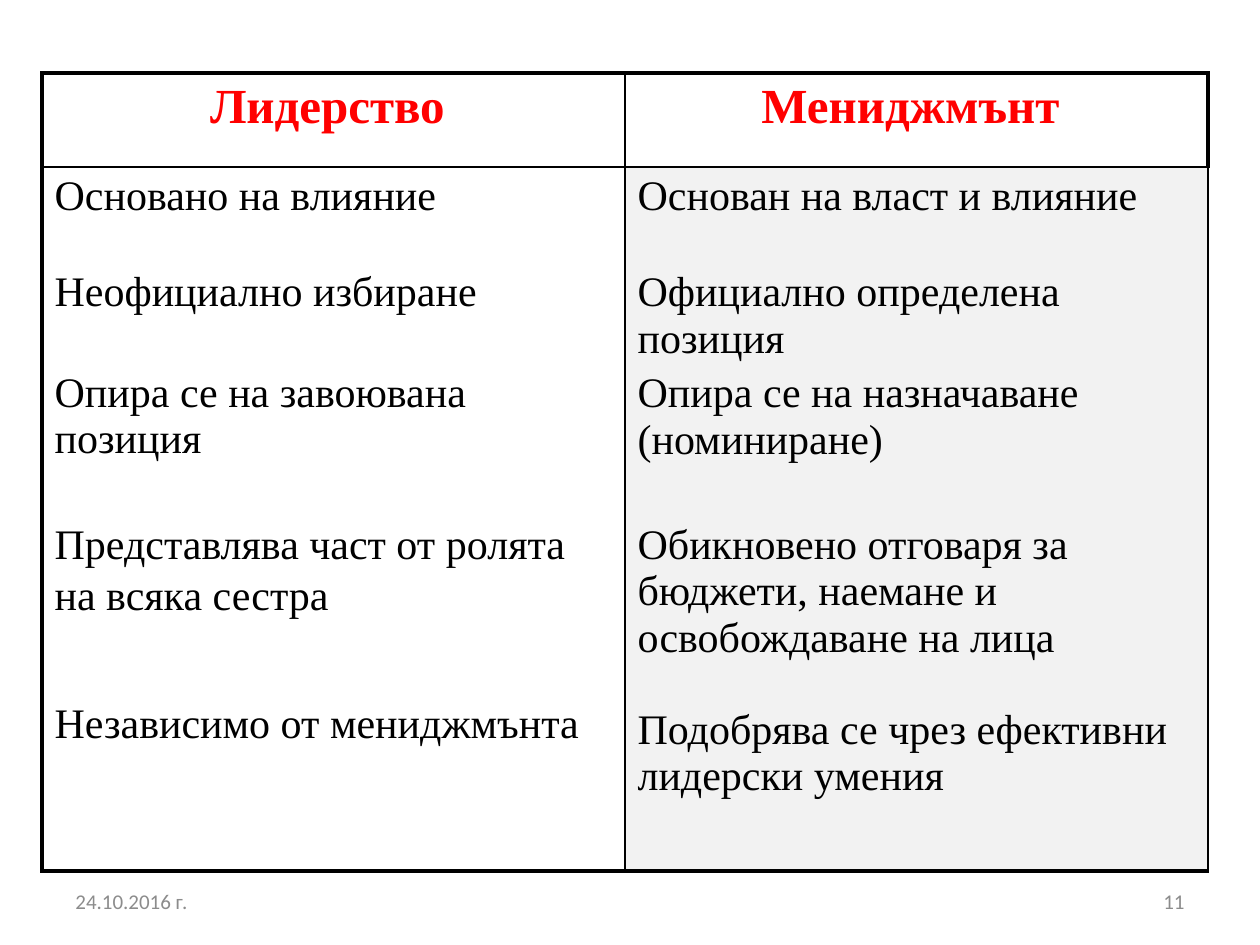
from dataclasses import dataclass

from lxml import etree
from pptx import Presentation
from pptx.dml.color import RGBColor
from pptx.enum.text import MSO_ANCHOR, PP_ALIGN
from pptx.oxml.ns import qn
from pptx.util import Pt

LEFT, CENTER, RIGHT = PP_ALIGN.LEFT, PP_ALIGN.CENTER, PP_ALIGN.RIGHT
MIDDLE = MSO_ANCHOR.MIDDLE
EMU_PER_PX = 914400 / 126
SERIF, SANS = "Times New Roman", "Calibri"
BLACK, RED, GRAY, WHITE, PALE = "000000", "FF0000", "8C8C8C", "FFFFFF", "F2F2F2"
THIN, THICK = 1, 2.25


@dataclass
class Para:
    text: str
    before: float = 0
    spacing: float = 1


@dataclass
class Style:
    font: str
    size: int
    color: str
    align: PP_ALIGN = LEFT
    bold: bool = False


@dataclass
class Column:
    heading: str
    items: list[Para]
    body_fill: str


@dataclass
class Footer:
    text: str
    left: int
    align: PP_ALIGN


HEADING = Style(SERIF, 28, RED, CENTER, True)
BODY = Style(SERIF, 24, BLACK)

COLUMNS = [
    Column("Лидерство ", [
        Para("Основано на влияние"),
        Para("Неофициално избиране", 28.3),
        Para("Опира се на завоювана позиция", 31),
        Para("Представлява част от ролята на всяка сестра", 31, 1.1),
        Para("Независимо от мениджмънта", 44, 1.1),
    ], WHITE),
    Column("Мениджмънт ", [
        Para("Основан на власт и влияние"),
        Para("Официално определена позиция", 28.3),
        Para("Опира се на назначаване (номиниране)", 4.8),
        Para("Обикновено отговаря за бюджети, наемане и освобождаване на лица", 33.5),
        Para("Подобрява се чрез ефективни лидерски умения", 26),
    ], PALE),
]
FOOTERS = [Footer("24.10.2016 г.", 63, LEFT), Footer("11", 903, RIGHT)]


def px(n: int) -> int:
    return round(n * EMU_PER_PX)


def rgb(color: str) -> RGBColor:
    return RGBColor.from_string(color)


def write(tf, paras: list[Para], style: Style) -> None:
    for i, para in enumerate(paras):
        p = tf.add_paragraph() if i else tf.paragraphs[0]
        p.alignment = style.align
        p.line_spacing = para.spacing
        if i:
            p.space_before = Pt(para.before)
        r = p.add_run()
        r.text = para.text
        r.font.name = style.font
        r.font.size = Pt(style.size)
        r.font.bold = style.bold
        r.font.color.rgb = rgb(style.color)


def add_borders(cell, widths: dict[str, float]) -> None:
    tc_pr = cell._tc.get_or_add_tcPr()
    for side, width in widths.items():
        ln = etree.SubElement(tc_pr, qn(f"a:ln{side}"), w=str(Pt(width)))
        fill = etree.SubElement(ln, qn("a:solidFill"))
        etree.SubElement(fill, qn("a:srgbClr"), val=BLACK)


def fill_cell(cell, paras: list[Para], style: Style, fill: str,
              widths: dict[str, float]) -> None:
    add_borders(cell, widths)
    cell.fill.solid()
    cell.fill.fore_color.rgb = rgb(fill)
    write(cell.text_frame, paras, style)


def add_comparison(slide, columns: list[Column]) -> None:
    table = slide.shapes.add_table(2, len(columns), px(42), px(73), px(1166), px(798)).table
    table.first_row = table.horz_banding = False
    for row, height in zip(table.rows, (94, 704)):
        row.height = px(height)
    for i, column in enumerate(columns):
        table.columns[i].width = px(583)
        left = THIN if i else THICK
        right = THICK if i else THIN
        fill_cell(table.cell(0, i), [Para(column.heading)], HEADING, WHITE,
                  {"L": left, "R": right, "T": THICK, "B": THIN})
        fill_cell(table.cell(1, i), column.items, BODY, column.body_fill,
                  {"L": left, "R": THIN, "T": THIN, "B": THICK})


def add_footer(slide, footer: Footer) -> None:
    tf = slide.shapes.add_textbox(px(footer.left), px(876), px(294), px(50)).text_frame
    tf.word_wrap = True
    tf.vertical_anchor = MIDDLE
    write(tf, [Para(footer.text)], Style(SANS, 12, GRAY, footer.align))


def main() -> None:
    prs = Presentation()
    prs.slide_width, prs.slide_height = px(1260), px(945)
    s = prs.slides.add_slide(prs.slide_layouts[6])

    # Date and slide number
    for footer in FOOTERS:
        add_footer(s, footer)

    # Leadership and management side by side
    add_comparison(s, COLUMNS)

    prs.save("out.pptx")


if __name__ == "__main__":
    main()
